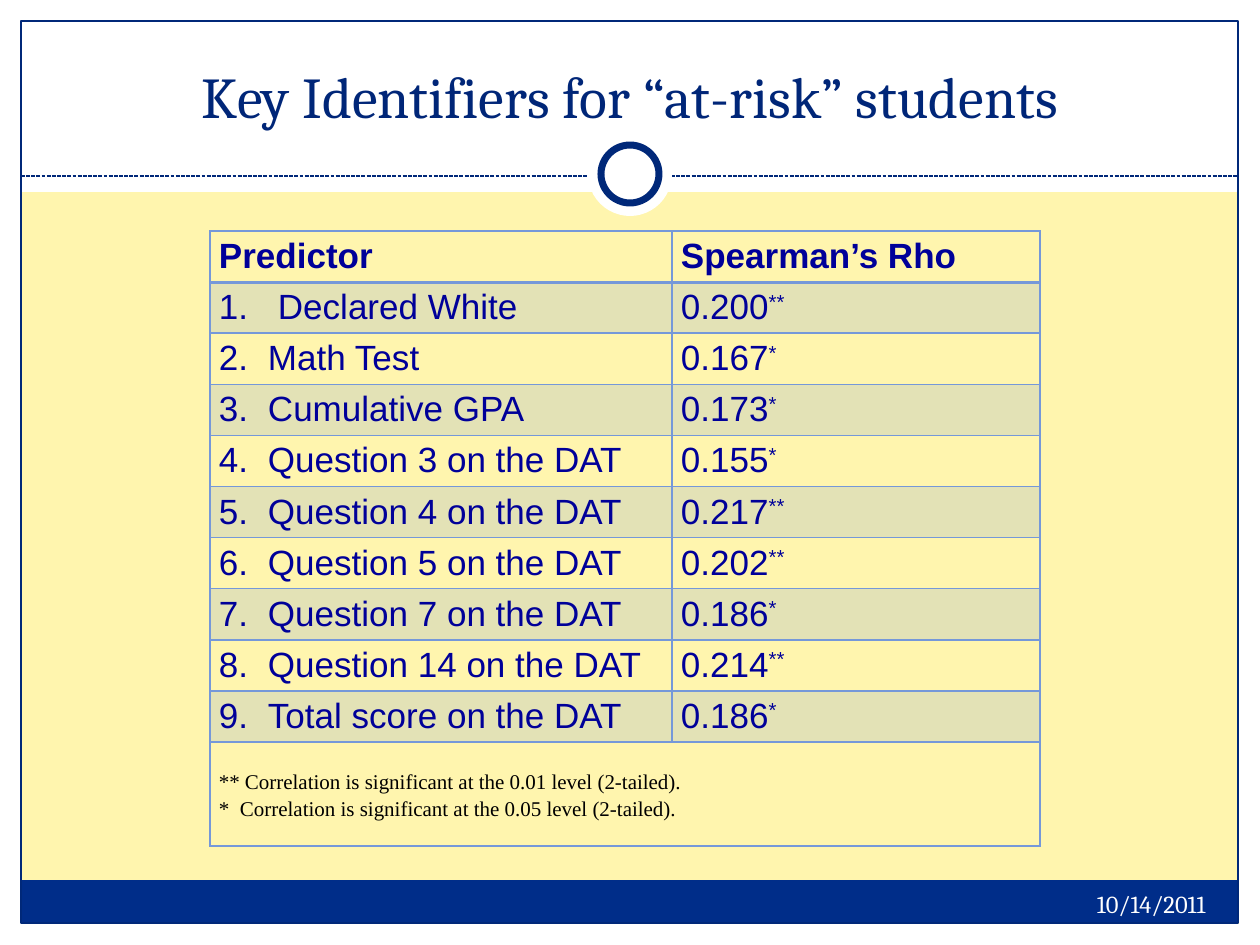
from dataclasses import dataclass
from typing import Optional

from lxml import etree
from pptx import Presentation
from pptx import util as u
from pptx.dml.color import RGBColor
from pptx.enum import dml, shapes, text
from pptx.oxml import ns

SCALE = 914400 / 126  # EMU in one px

WHITE = RGBColor(0xFF, 0xFF, 0xFF)
CREAM = RGBColor(0xFF, 0xF5, 0xAE)
NAVY = RGBColor(0x00, 0x28, 0x79)
BAR = RGBColor(0x00, 0x2D, 0x89)
TITLE = RGBColor(0x00, 0x26, 0x78)
INK = RGBColor(0x00, 0x00, 0x99)
BLACK = RGBColor(0x00, 0x00, 0x00)
GRID = RGBColor(0x75, 0x98, 0xD9)

RECT = shapes.MSO_SHAPE.RECTANGLE
OVAL = shapes.MSO_SHAPE.OVAL


@dataclass
class Box:
    x: int
    y: int
    w: int
    h: int

    def emu(self) -> list:
        return [px(v) for v in (self.x, self.y, self.w, self.h)]


@dataclass
class Form:
    box: Box
    fill: Optional[RGBColor] = None
    line: Optional[RGBColor] = None
    width: float = 0.75
    kind: shapes.MSO_SHAPE = RECT


@dataclass
class Row:
    name: str
    rho: str
    stars: str
    hang: int = 49


FORMS = [
    Form(Box(0, 924, 1260, 21), WHITE),
    Form(Box(0, 0, 1260, 192), WHITE),
    Form(Box(0, 0, 21, 945), WHITE),
    Form(Box(1239, 0, 21, 945), WHITE),
    Form(Box(21, 880, 1217, 43), BAR),
    Form(Box(21, 21, 1217, 902), line=NAVY),
]
RINGS = [
    Form(Box(588, 132, 84, 84), WHITE, kind=OVAL),
    Form(Box(601, 145, 58, 58), WHITE, NAVY, 4, OVAL),
]
ROWS = [
    Row("Declared White", "0.200", "**", 59),
    Row("Math Test", "0.167", "*"),
    Row("Cumulative GPA", "0.173", "*"),
    Row("Question 3 on the DAT", "0.155", "*"),
    Row("Question 4 on the DAT", "0.217", "**"),
    Row("Question 5 on the DAT", "0.202", "**"),
    Row("Question 7 on the DAT", "0.186", "*"),
    Row("Question 14 on the DAT", "0.214", "**"),
    Row("Total score on the DAT", "0.186", "*"),
]
NOTES = [
    ("**", "Correlation is significant at the 0.01 level (2-tailed).", 26),
    ("*", "Correlation is significant at the 0.05 level (2-tailed).", 21),
]
BODY = {"name": "Arial", "size": u.Pt(20), "bold": False}
HEAD = BODY | {"bold": True}
NOTE = {"name": "Times New Roman", "size": u.Pt(12), "bold": False}


def px(n: float) -> int:
    return round(n * SCALE)


def style(font, look: dict, color: RGBColor) -> None:
    for key, value in look.items():
        setattr(font, key, value)
    font.color.rgb = color


def draw(slide, form: Form) -> None:
    shape = slide.shapes.add_shape(form.kind, *form.box.emu())
    shape.shadow.inherit = False
    if form.fill is None:
        shape.fill.background()
    else:
        shape.fill.solid()
        shape.fill.fore_color.rgb = form.fill
    if form.line is None:
        shape.line.fill.background()
    else:
        shape.line.color.rgb = form.line
        shape.line.width = u.Pt(form.width)


def rule(slide) -> None:
    """Dashed line under the title."""
    line = slide.shapes.add_connector(
        shapes.MSO_CONNECTOR.STRAIGHT, px(21), px(176), px(1239), px(176))
    line.line.color.rgb = NAVY
    line.line.width = u.Pt(0.75)
    line.line.dash_style = dml.MSO_LINE.SQUARE_DOT
    props = line._element.spPr
    props.find(ns.qn("a:ln")).find(ns.qn("a:prstDash")).set("val", "sysDash")
    etree.SubElement(props, ns.qn("a:effectLst"))


def label(slide, box: Box, words: str, size: int, color: RGBColor,
          align, anchor) -> None:
    frame = slide.shapes.add_textbox(*box.emu()).text_frame
    frame.word_wrap = True
    frame.vertical_anchor = anchor
    para = frame.paragraphs[0]
    para.alignment = align
    run = para.add_run()
    run.text = words
    style(run.font, {"name": "Cambria", "size": u.Pt(size)}, color)


def write(para, words: str, look: dict, color: RGBColor, hang: int = 0,
          sup: str = "") -> None:
    """Fill a cell paragraph, with a hanging indent and raised marks."""
    para.line_spacing = 1.15
    if hang:
        props = para._p.get_or_add_pPr()
        props.set("marL", str(px(hang)))
        props.set("indent", str(-px(hang)))
    for part in filter(None, (words, sup)):
        run = para.add_run()
        run.text = part
        style(run.font, look, color)
        if part == sup:
            run._r.get_or_add_rPr().set("baseline", "30000")


def border(cell, low: float = 1, top: float = 1) -> None:
    props = cell._tc.get_or_add_tcPr()
    sides = {"lnL": 1, "lnR": 1, "lnT": top, "lnB": low}
    for i, (tag, width) in enumerate(sides.items()):
        line = etree.Element(ns.qn("a:" + tag), w=str(u.Pt(width)))
        fill = etree.SubElement(line, ns.qn("a:solidFill"))
        etree.SubElement(fill, ns.qn("a:srgbClr"), val=str(GRID))
        props.insert(i, line)


def paint(cell, band: bool) -> None:
    if not band:
        cell.fill.background()
        return
    cell.fill.solid()
    cell.fill.fore_color.rgb = GRID
    color = cell._tc.tcPr.find(".//" + ns.qn("a:srgbClr"))
    etree.SubElement(color, ns.qn("a:alpha"), val="20000")


def grid(slide) -> None:
    last = len(ROWS) + 1
    table = slide.shapes.add_table(
        last + 1, 2, *Box(210, 231, 830, 615).emu()).table
    table.first_row = table.horz_banding = False
    for col, width in zip(table.columns, (462, 368)):
        col.width = px(width)
    for i, row in enumerate(table.rows):
        row.height = px(104 if i == last else 51.1)
        for cell in row.cells:
            cell.margin_left = cell.margin_right = px(9)
            cell.margin_top = cell.margin_bottom = 0
            paint(cell, i % 2 == 1 and i < last)
            border(cell, 2 if i == 0 else 1, 2 if i == 1 else 1)

    for j, words in enumerate(("Predictor", "Spearman’s Rho")):
        write(table.cell(0, j).text_frame.paragraphs[0], words, HEAD, INK)
    for i, row in enumerate(ROWS, 1):
        left, right = (table.cell(i, j).text_frame.paragraphs[0]
                       for j in range(2))
        write(left, f"{i}.\t{row.name}", BODY, INK, row.hang)
        write(right, row.rho, BODY, INK, sup=row.stars)

    foot = table.cell(last, 0)
    foot.merge(table.cell(last, 1))
    foot.vertical_anchor = text.MSO_ANCHOR.MIDDLE
    frame = foot.text_frame
    for i, (mark, words, hang) in enumerate(NOTES):
        para = frame.add_paragraph() if i else frame.paragraphs[0]
        write(para, f"{mark}\t{words}", NOTE, BLACK, hang)


def main() -> None:
    deck = Presentation()
    deck.slide_width, deck.slide_height = px(1260), px(945)
    slide = deck.slides.add_slide(deck.slide_layouts[6])
    slide.background.fill.solid()
    slide.background.fill.fore_color.rgb = CREAM
    for form in FORMS:
        draw(slide, form)
    rule(slide)
    for ring in RINGS:
        draw(slide, ring)
    label(slide, Box(42, 32, 1176, 104), "Key Identifiers for “at-risk” students",
          33, TITLE, text.PP_ALIGN.CENTER, text.MSO_ANCHOR.BOTTOM)
    label(slide, Box(798, 883, 420, 50), "10/14/2011",
          14, WHITE, text.PP_ALIGN.RIGHT, text.MSO_ANCHOR.TOP)
    grid(slide)
    deck.save("out.pptx")


if __name__ == "__main__":
    main()
